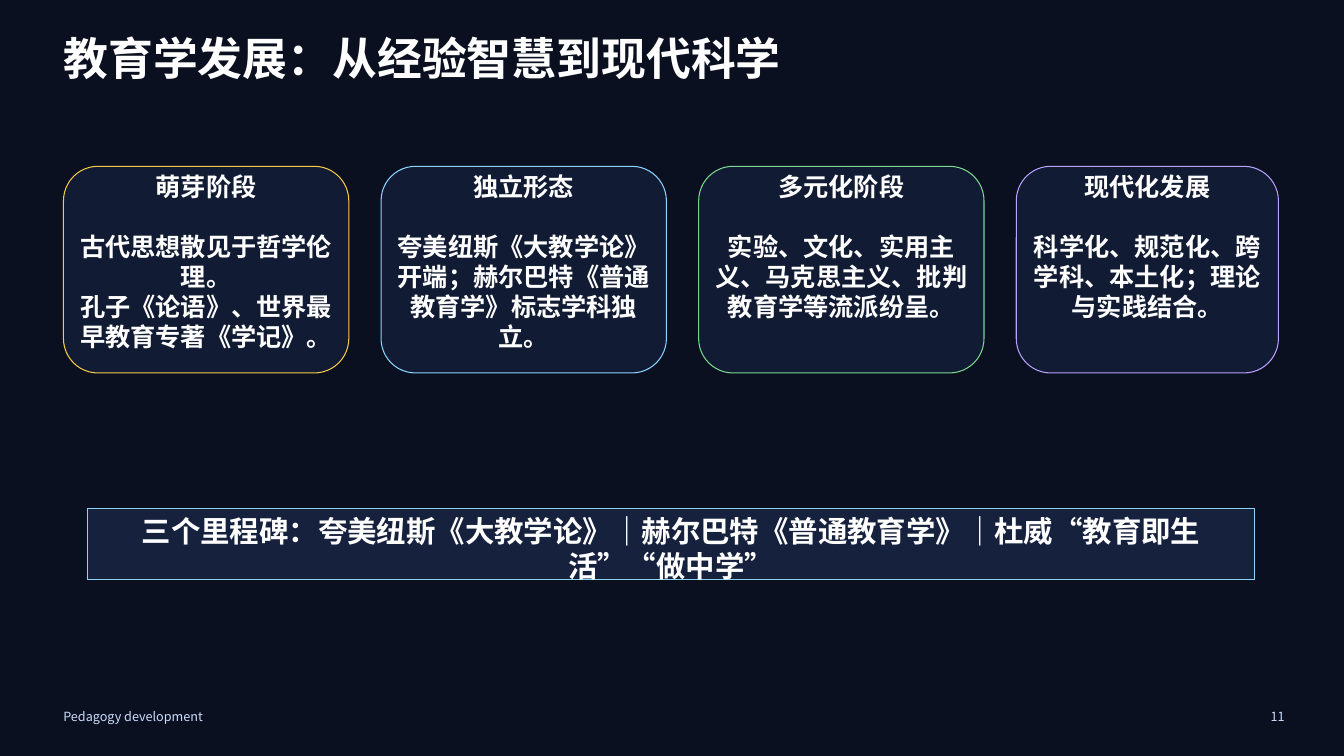
import pptx
import pptx.util
import pptx.dml.color
import pptx.enum.shapes
import pptx.enum.text
import pptx.oxml.ns
import lxml.etree

Inches = pptx.util.Inches
Pt = pptx.util.Pt
Shape = pptx.enum.shapes.MSO_SHAPE
Align = pptx.enum.text.PP_ALIGN

FONT = "Noto Sans CJK SC"
COLORS = {
    "background": "0B1020", "card": "111B33", "banner": "16213E",
    "white": "FFFFFF", "muted": "CADCFC", "gold": "F7C948",
    "sky": "8DD3FF", "green": "7BD88F", "violet": "B8A1FF",
}
LINE_RATIO = 1.19

STAGES = [
    ("gold", 2.83, ["萌芽阶段", "古代思想散见于哲学伦理。", "孔子《论语》、世界最早教育专著《学记》。"]),
    ("sky", 2.83, ["独立形态", "夸美纽斯《大教学论》开端；赫尔巴特《普通教育学》标志学科独立。"]),
    ("green", 2.83, ["多元化阶段", "实验、文化、实用主义、马克思主义、批判教育学等流派纷呈。"]),
    ("violet", 2.6, ["现代化发展", "科学化、规范化、跨学科、本土化；理论与实践结合。"]),
]


def color(name):
    return pptx.dml.color.RGBColor.from_string(COLORS[name])


def write_text(frame, lines, size, ink="white", bold=False, align=Align.LEFT,
               top=0.05, spacing=None, heading_gap=None):
    frame.word_wrap = True
    frame.auto_size = pptx.enum.text.MSO_AUTO_SIZE.NONE
    frame.vertical_anchor = pptx.enum.text.MSO_ANCHOR.TOP
    frame.margin_left = frame.margin_right = Inches(0.1)
    frame.margin_top = Inches(top)
    frame.margin_bottom = Inches(0)
    for index, line in enumerate(lines):
        paragraph = frame.paragraphs[0] if index == 0 else frame.add_paragraph()
        paragraph.alignment = align
        paragraph._p.get_or_add_pPr().set("hangingPunct", "0")
        if spacing:
            paragraph.line_spacing = Pt(spacing)
        if heading_gap and index == 1:
            paragraph.space_before = Pt(heading_gap)
        run = paragraph.add_run()
        run.text = line
        run.font.name = FONT
        run.font.size = Pt(size)
        run.font.bold = bold
        run.font.color.rgb = color(ink)
        east_asian = lxml.etree.SubElement(run.font._element, pptx.oxml.ns.qn("a:ea"))
        east_asian.set("typeface", FONT)


class Deck:
    def __init__(self):
        self.presentation = pptx.Presentation()
        self.presentation.slide_width = Inches(13.33)
        self.presentation.slide_height = Inches(7.5)
        self.slide = self.presentation.slides.add_slide(self.presentation.slide_layouts[5])
        self.slide.background.fill.solid()
        self.slide.background.fill.fore_color.rgb = color("background")

    def title(self, text, left, top, width, height):
        heading = self.slide.shapes.title
        heading.left, heading.top = Inches(left), Inches(top)
        heading.width, heading.height = Inches(width), Inches(height)
        write_text(heading.text_frame, [text], 32, bold=True, top=0.06)

    def panel(self, preset, box, fill, border):
        panel = self.slide.shapes.add_shape(preset, *map(Inches, box))
        panel.shadow.inherit = False
        panel.fill.solid()
        panel.fill.fore_color.rgb = color(fill)
        panel.line.color.rgb = color(border)
        panel.line.width = Pt(0.75)
        return panel

    def text_box(self, lines, box, size, **text_format):
        text_box = self.slide.shapes.add_textbox(*map(Inches, box))
        write_text(text_box.text_frame, lines, size, **text_format)

    def card(self, lines, box, accent):
        self.panel(Shape.ROUNDED_RECTANGLE, box, "card", accent)
        pitch = round(18 * LINE_RATIO, 1)
        self.text_box(lines, box, 18, bold=True, align=Align.CENTER,
                      spacing=pitch, heading_gap=pitch)

    def banner(self, text, box):
        banner = self.panel(Shape.RECTANGLE, box, "banner", "sky")
        write_text(banner.text_frame, [text], 21, bold=True, align=Align.CENTER,
                   spacing=round(21 * LINE_RATIO, 1))

    def footer(self, text, box, align=Align.LEFT):
        self.text_box([text], box, 9, ink="muted", align=align, top=0.04)


def main():
    deck = Deck()
    deck.title("教育学发展：从经验智慧到现代科学", 0.53, 0.24, 11.34, 0.87)
    for index, (accent, width, lines) in enumerate(STAGES):
        deck.card(lines, (0.63 + 3.15 * index, 1.65, width, 2.05), accent)
    deck.banner("三个里程碑：夸美纽斯《大教学论》｜赫尔巴特《普通教育学》｜杜威“教育即生活”“做中学”",
                (0.87, 5.04, 11.57, 0.71))
    deck.footer("Pedagogy development", (0.53, 6.99, 9.45, 0.3))
    deck.footer("11", (11.97, 6.99, 0.87, 0.3), Align.RIGHT)
    deck.presentation.save("out.pptx")


if __name__ == "__main__":
    main()
